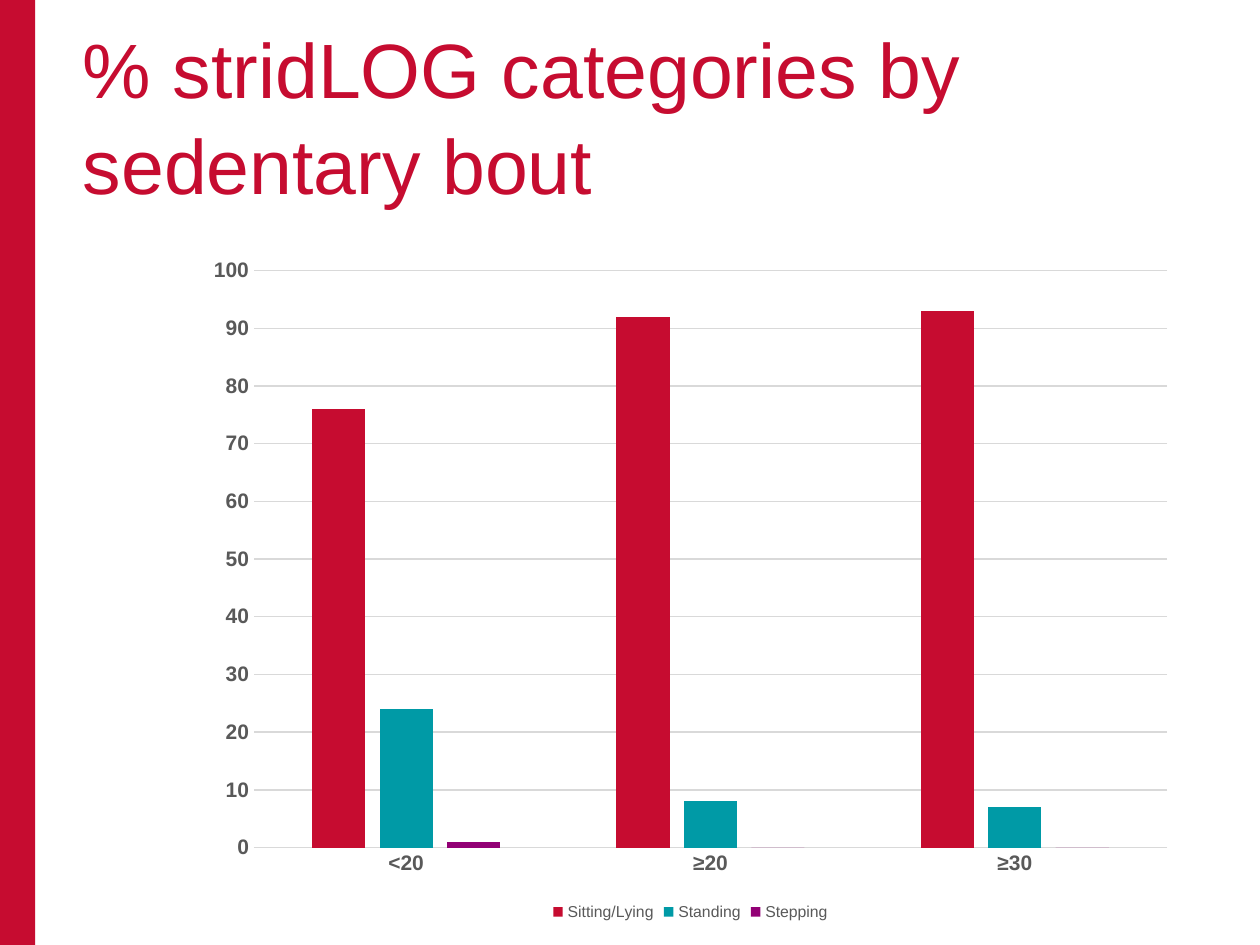
"""Builds a slide with a clustered column chart of activity categories by sedentary bout."""
import pptx
import pptx.chart.data
import pptx.dml.color
import pptx.enum.chart
import pptx.enum.text
import pptx.util

Inches = pptx.util.Inches
Pt = pptx.util.Pt
RGBColor = pptx.dml.color.RGBColor

RED = RGBColor(0xC6, 0x0C, 0x30)
TEAL = RGBColor(0x00, 0x9A, 0xA6)
PURPLE = RGBColor(0x92, 0x00, 0x75)
GREY = RGBColor(0x59, 0x59, 0x59)
LIGHT = RGBColor(0xD9, 0xD9, 0xD9)

CATEGORIES = ["<20", "≥20", "≥30"]
SERIES = [
    ("Sitting/Lying", (76, 92, 93), RED),
    ("Standing", (24, 8, 7), TEAL),
    ("Stepping", (1, 0, 0), PURPLE),
]


def set_font(font, size, color, bold=False):
    font.name = "Arial"
    font.size = Pt(size)
    font.bold = bold
    font.color.rgb = color


prs = pptx.Presentation()
prs.slide_width = Inches(10)
prs.slide_height = Inches(7.5)
s = prs.slides.add_slide(prs.slide_layouts[6])

band = s.shapes.add_shape(
    pptx.enum.shapes.MSO_SHAPE.RECTANGLE, 0, 0, Inches(0.28), Inches(7.5))
band.shadow.inherit = False
band.fill.solid()
band.fill.fore_color.rgb = RED
band.line.fill.background()

data = pptx.chart.data.CategoryChartData()
data.categories = CATEGORIES
for name, values, color in SERIES:
    data.add_series(name, values)
chart = s.shapes.add_chart(
    pptx.enum.chart.XL_CHART_TYPE.COLUMN_CLUSTERED,
    Inches(1.54), Inches(1.95), Inches(7.88), Inches(5.4), data).chart
chart.has_title = False
chart.font.name = "Arial"
chart.font.size = Pt(10)

plot = chart.plots[0]
plot.gap_width = 219
plot.overlap = -27
plot.vary_by_categories = False
for series, (name, values, color) in zip(plot.series, SERIES):
    series.format.fill.solid()
    series.format.fill.fore_color.rgb = color

for axis in (chart.category_axis, chart.value_axis):
    axis.major_tick_mark = pptx.enum.chart.XL_TICK_MARK.NONE
    axis.minor_tick_mark = pptx.enum.chart.XL_TICK_MARK.NONE
    set_font(axis.tick_labels.font, 12, GREY, True)
chart.value_axis.minimum_scale = 0
chart.value_axis.maximum_scale = 100
chart.value_axis.major_unit = 10
chart.value_axis.has_major_gridlines = True
chart.value_axis.format.line.fill.background()
for line in (chart.category_axis.format.line,
             chart.value_axis.major_gridlines.format.line):
    line.color.rgb = LIGHT
    line.width = Pt(0.75)

chart.has_legend = True
chart.legend.position = pptx.enum.chart.XL_LEGEND_POSITION.BOTTOM
chart.legend.include_in_layout = False
set_font(chart.legend.font, 9, GREY)

tf = s.shapes.add_textbox(
    Inches(0.56), Inches(0.09), Inches(8.94), Inches(1.29)).text_frame
tf.word_wrap = True
tf.vertical_anchor = pptx.enum.text.MSO_ANCHOR.TOP
p = tf.paragraphs[0]
p.text = "% stridLOG categories by sedentary bout"
p.line_spacing = 1.04
set_font(p.font, 44, RED)

prs.save("out.pptx")
